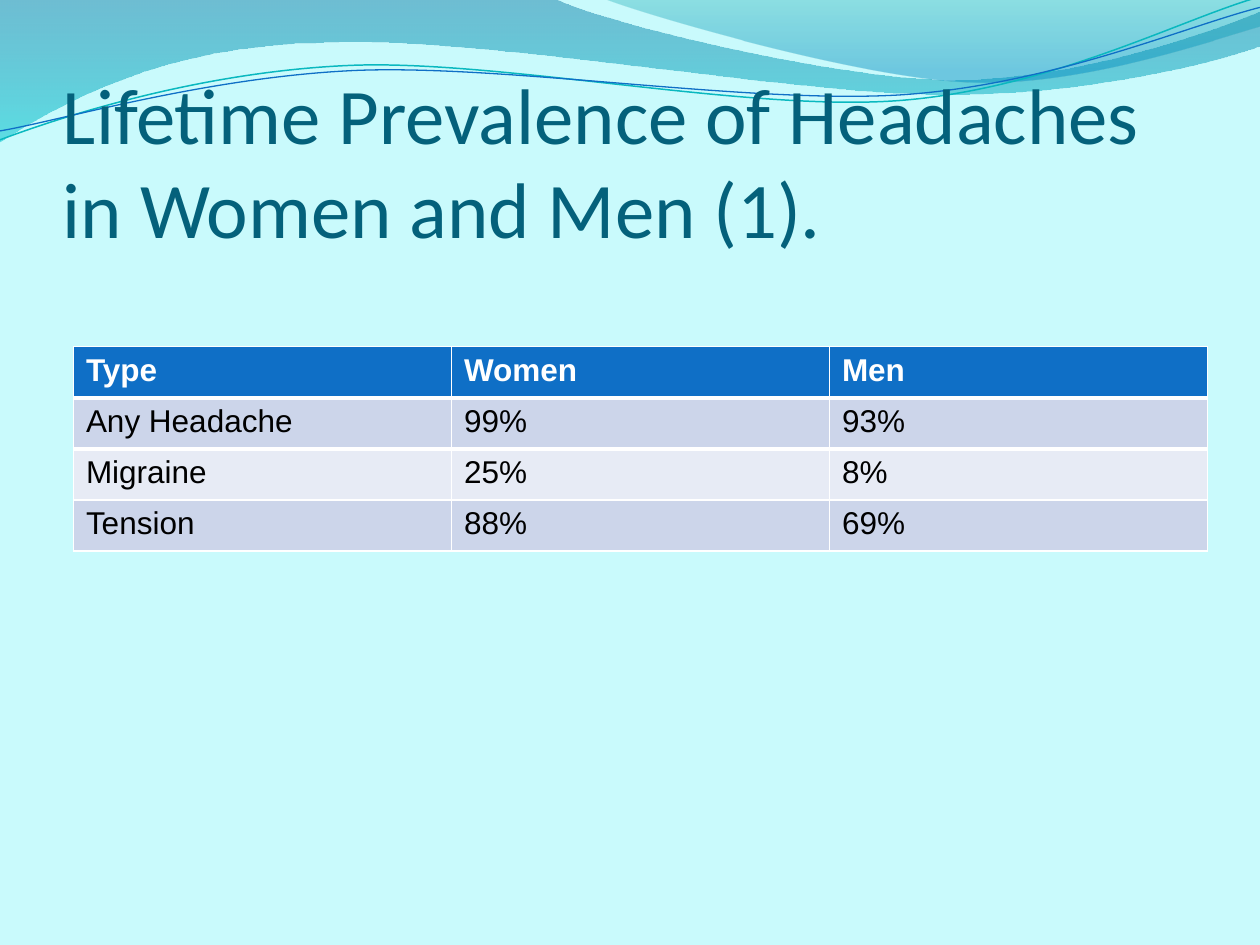
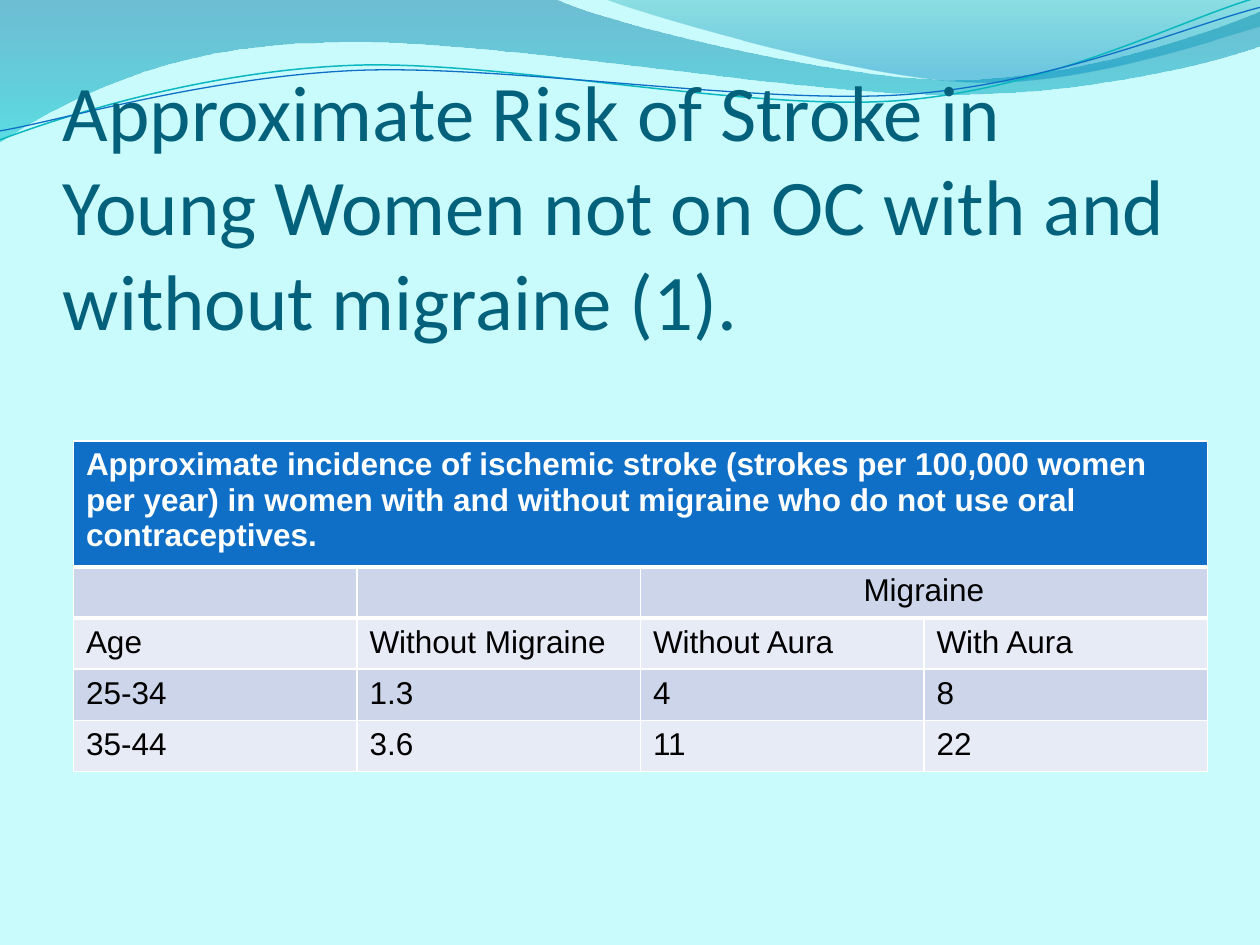
from lxml.etree import SubElement
from pptx import Presentation
from pptx.dml.color import RGBColor
from pptx.enum.text import MSO_ANCHOR as Anchor, PP_ALIGN as Align
from pptx.oxml.ns import qn
from pptx.util import Cm, Pt

BACKGROUND, TITLE_COLOR = "C9FAFC", "04617B"
HEADER_FILL, HEADER_TEXT, BODY_TEXT = "0F6FC6", "FFFFFF", "000000"
BAND_FILLS = ["E7EBF5", "CCD5EA"]
RULE_COLOR, HEADER_RULE = "FFFFFF", 3
TITLE_FONT, TABLE_FONT = "Calibri", "Arial"
MARGIN, TABLE_LEFT, CONTENT_WIDTH = 1.27, 1.48, 22.86
ROW_HEIGHT = 1.03
SPAN = None

SLIDES = [
    dict(
        title="Lifetime Prevalence of Headaches in Women and Men (1).",
        title_top=1.95, title_height=3.18, table_top=6.99, header_height=ROW_HEIGHT,
        rows=[
            ["Type", "Women", "Men"],
            ["Any Headache", "99%", "93%"],
            ["Migraine", "25%", "8%"],
            ["Tension", "88%", "69%"],
        ],
    ),
    dict(
        title="Approximate Risk of Stroke in Young Women not on OC with and without migraine (1).",
        title_top=0.76, title_height=6.22, table_top=8.89, header_height=2.54,
        rows=[
            ["Approximate incidence of ischemic stroke (strokes per 100,000 women per year) "
             "in women with and without migraine who do not use oral contraceptives.",
             SPAN, SPAN, SPAN],
            ["", "", "Migraine", SPAN],
            ["Age", "Without Migraine", "Without Aura", "With Aura"],
            ["25-34", "1.3", "4", "8"],
            ["35-44", "3.6", "11", "22"],
        ],
    ),
]

BANDS = [
    dict(
        start=(0, -0.03),
        segments=[
            [(11.18, -0.03)],
            [(12.09, 0.43), (16.87, 1.6), (19.25, 1.6)],
            [(21.67, 1.6), (24.33, 0.66), (25.4, 0.23)],
            [(25.43, 0.91)],
            [(24.97, 1.12), (22.1, 1.93), (18.95, 1.9)],
            [(15.8, 1.9), (9.7, 0.71), (6.53, 0.86)],
            [(3.28, 0.89), (1.17, 2.11), (-0.03, 2.87)],
            [(0, -0.03)],
        ],
        stops=[(0, "0074A1", 45), (1, "00C6CF", 55)],
    ),
    dict(
        start=(12.17, -0.03),
        segments=[
            [(12.93, 0.28), (17.32, 1.57), (19.53, 1.65)],
            [(21.74, 1.75), (24.41, 0.81), (25.4, 0.53)],
            [(25.4, 0)],
            [(12.17, -0.03)],
        ],
        stops=[(0, "00A1A9", 30), (0.8, "008BBF", 45)],
    ),
]

WAVES = [
    dict(
        start=(0, 2.82),
        segments=[
            [(1.22, 2.36), (4.01, 1.45), (7.04, 1.32)],
            [(10.03, 1.19), (15.06, 2.26), (18.11, 2.03)],
            [(21.16, 1.8), (23.83, 0.38), (25.35, -0.05)],
        ],
        color="0AB8BF", width=0.85,
    ),
    dict(
        start=(0, 2.64),
        segments=[
            [(1.19, 2.44), (4.17, 1.55), (7.19, 1.42)],
            [(10.24, 1.3), (15.16, 2.11), (18.21, 1.91)],
            [(21.23, 1.7), (23.9, 0.53), (25.4, 0.15)],
        ],
        color="0F6FC6", width=0.75,
    ),
]


def rgb(hex_color):
    return RGBColor.from_string(hex_color)


def draw_outline(slide, start, segments, close):
    builder = slide.shapes.build_freeform(Cm(start[0]), Cm(start[1]))
    points = [(Cm(x), Cm(y)) for segment in segments for x, y in segment]
    builder.add_line_segments(points, close=close)
    outline = builder.convert_to_shape()
    outline.shadow.inherit = False
    steps = iter(list(outline._element.spPr.iter(qn("a:lnTo"))))
    for segment in segments:
        first, *others = [next(steps) for _ in segment]
        if others:
            first.tag = qn("a:cubicBezTo")
        for other in others:
            first.append(other[0])
            other.getparent().remove(other)
    return outline


def draw_band(slide, band):
    shape = draw_outline(slide, band["start"], band["segments"], True)
    shape.line.fill.background()
    shape.fill.gradient()
    shape.fill.gradient_angle = 270
    for stop, (position, color, _) in zip(shape.fill.gradient_stops, band["stops"]):
        stop.position = position
        stop.color.rgb = rgb(color)
    colors = list(shape._element.spPr.iter(qn("a:srgbClr")))
    for color, (_, _, opacity) in zip(colors, band["stops"]):
        SubElement(color, qn("a:alpha"), val=str(opacity * 1000))


def draw_wave(slide, wave):
    shape = draw_outline(slide, wave["start"], wave["segments"], False)
    shape.fill.background()
    shape.line.color.rgb = rgb(wave["color"])
    shape.line.width = Pt(wave["width"])


def add_run(paragraph, text, font, size, color, bold=False):
    run = paragraph.add_run()
    run.text = text
    run.font.name, run.font.size, run.font.bold = font, Pt(size), bold
    run.font.color.rgb = rgb(color)


def add_title(slide, text, top, height):
    box = slide.shapes.add_textbox(Cm(MARGIN), Cm(top), Cm(CONTENT_WIDTH), Cm(height))
    frame = box.text_frame
    frame.word_wrap = True
    frame.vertical_anchor = Anchor.BOTTOM
    frame.margin_left = frame.margin_right = frame.margin_bottom = 0
    add_run(frame.paragraphs[0], text, TITLE_FONT, 45, TITLE_COLOR)


def draw_rule(cell, side, width):
    properties = cell._tc.get_or_add_tcPr()
    rule = SubElement(properties, qn(f"a:{side}"), w=str(Pt(width)))
    SubElement(SubElement(rule, qn("a:solidFill")), qn("a:srgbClr"), val=RULE_COLOR)
    properties.insert(0, rule)


def add_data_table(slide, rows, top, header_height):
    heights = [header_height] + [ROW_HEIGHT] * (len(rows) - 1)
    table = slide.shapes.add_table(
        len(rows), len(rows[0]), Cm(TABLE_LEFT), Cm(top), Cm(CONTENT_WIDTH), Cm(sum(heights))
    ).table
    for r, (row, height) in enumerate(zip(rows, heights)):
        table.rows[r].height = Cm(height)
        is_header = r == 0
        for c, text in enumerate(row):
            cell = table.cell(r, c)
            cell.fill.solid()
            cell.fill.fore_color.rgb = rgb(HEADER_FILL if is_header else BAND_FILLS[r % 2])
            if r < 2:
                draw_rule(cell, "lnB" if is_header else "lnT", HEADER_RULE)
            if text:
                paragraph = cell.text_frame.paragraphs[0]
                add_run(paragraph, text, TABLE_FONT, 18,
                        HEADER_TEXT if is_header else BODY_TEXT, is_header)
                if SPAN in row and not is_header:
                    paragraph.alignment = Align.CENTER
        if SPAN in row:
            table.cell(r, row.index(SPAN) - 1).merge(table.cell(r, len(row) - 1))


def main():
    deck = Presentation()
    deck.slide_width, deck.slide_height = Cm(25.4), Cm(19.05)
    backdrop = deck.slide_master.background.fill
    backdrop.solid()
    backdrop.fore_color.rgb = rgb(BACKGROUND)
    for content in SLIDES:
        slide = deck.slides.add_slide(deck.slide_layouts[6])
        for band in BANDS:
            draw_band(slide, band)
        for wave in WAVES:
            draw_wave(slide, wave)
        add_title(slide, content["title"], content["title_top"], content["title_height"])
        add_data_table(slide, content["rows"], content["table_top"], content["header_height"])
    deck.save("out.pptx")


if __name__ == "__main__":
    main()
